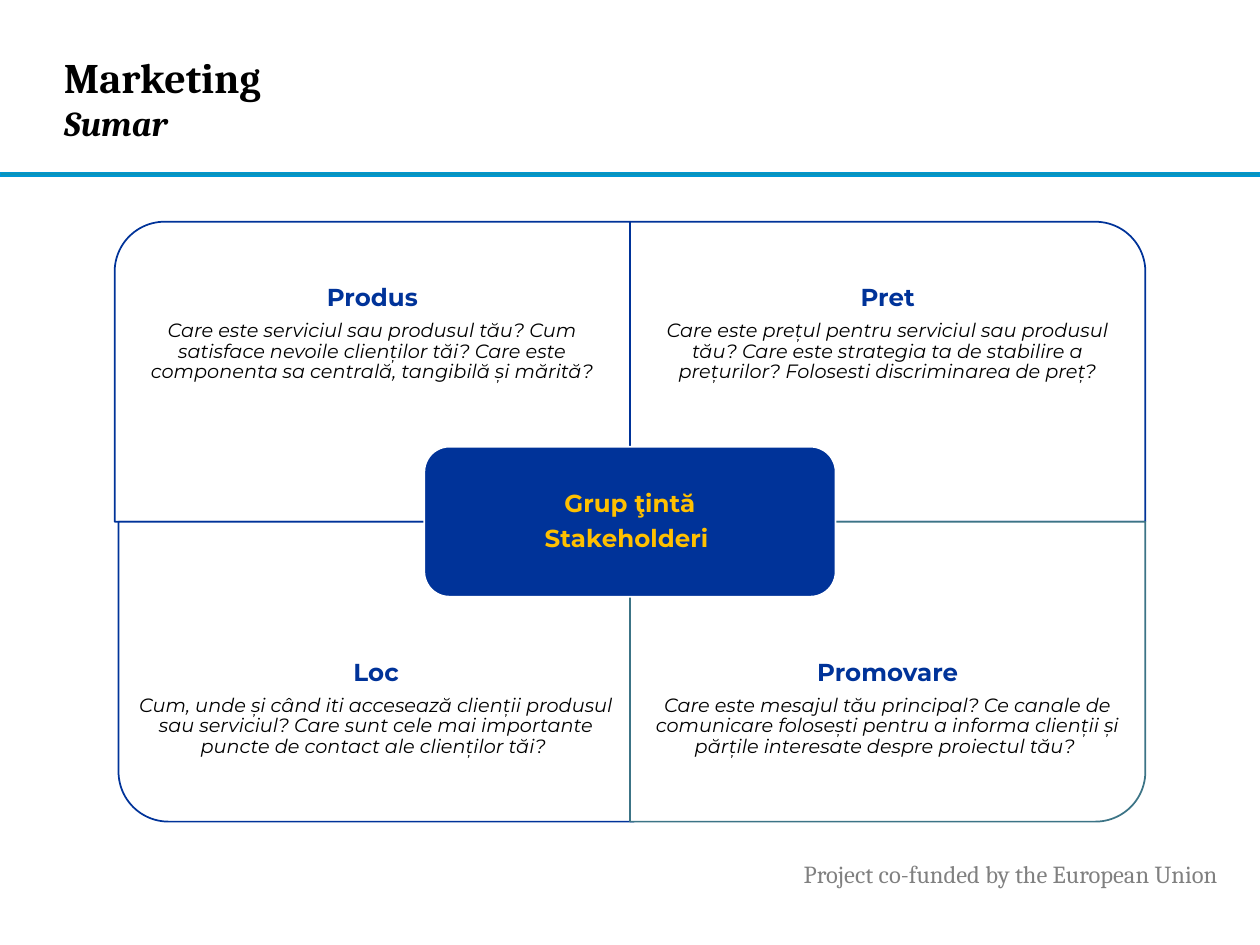
from pptx import Presentation
from pptx.dml.color import RGBColor
from pptx.enum.shapes import MSO_SHAPE
from pptx.enum.text import MSO_ANCHOR, PP_ALIGN
from pptx.util import Pt

BLUE = RGBColor(0x00, 0x33, 0x99)
TEAL = RGBColor(0x3C, 0x74, 0x86)
GOLD = RGBColor(0xFF, 0xC0, 0x00)
GRAY = RGBColor(0x80, 0x80, 0x80)
BLACK = RGBColor(0, 0, 0)
WHITE = RGBColor(0xFF, 0xFF, 0xFF)
BAR_FILL = RGBColor(0x0C, 0x94, 0xB7)
BAR_LINE = RGBColor(0x00, 0x96, 0xD3)

# Content: heading, question, left, row, rotation, outline
PANELS = [
    ("Produs", "Care este serviciul sau produsul tău? Cum satisface nevoile clienților tăi? "
     "Care este componenta sa centrală, tangibilă și mărită?", 65.5, 0, 270, BLUE),
    ("Pret", "Care este prețul pentru serviciul sau produsul tău? Care este strategia ta de "
     "stabilire a prețurilor? Folosesti discriminarea de preț?", 360, 0, 0, BLUE),
    ("Loc", "Cum, unde și când iti accesează clienții produsul sau serviciul? Care sunt cele "
     "mai importante puncte de contact ale clienților tăi? ", 67.7, 1, 180, BLUE),
    ("Promovare", "Care este mesajul tău principal? Ce canale de comunicare folosești pentru a "
     "informa clienții și părțile interesate despre proiectul tău? ", 360, 1, 90, TEAL),
]
CENTER = ["Grup ţintă", "Stakeholderi "]
FOOTER = "Project co-funded by the European Union"

# Text formats
TITLE = dict(name="Cambria", size=Pt(24), bold=True, italic=False, color=BLACK)
SUBTITLE = dict(TITLE, size=Pt(20), italic=True)
FOOT = dict(name="Cambria", size=Pt(14), color=GRAY)
HEADING = dict(name="Montserrat", size=Pt(14), bold=True, color=BLUE)
QUESTION = dict(name="Montserrat", size=Pt(11), italic=True, color=BLACK)
HUB = dict(HEADING, color=GOLD)

# Grid in points
PANEL_W, PANEL_H, TEXT_H = 294.5, 171.4, 128.6
TOP = 126.7
HUB_W, HUB_H = 235, 85.7

prs = Presentation()
prs.slide_width, prs.slide_height = Pt(720), Pt(540)
s = prs.slides.add_slide(prs.slide_layouts[6])


def add_shape(kind, x, y, w, h, fill, line, rotation=0):
    if rotation % 180:  # turned shapes keep their centre with sides swapped
        x, y, w, h = x + (w - h) / 2, y + (h - w) / 2, h, w
    sp = s.shapes.add_shape(kind, Pt(x), Pt(y), Pt(w), Pt(h))
    sp.shadow.inherit = False
    sp.rotation = rotation
    sp.fill.solid()
    sp.fill.fore_color.rgb = fill
    sp.line.color.rgb = line
    sp.line.width = Pt(1)


def add_run(p, text, fmt):
    r = p.add_run()
    r.text = text
    for key, value in fmt.items():
        if key == "color":
            r.font.color.rgb = value
        else:
            setattr(r.font, key, value)


def add_box(x, y, w, h, inset, anchor=MSO_ANCHOR.MIDDLE):
    tf = s.shapes.add_textbox(Pt(x), Pt(y), Pt(w), Pt(h)).text_frame
    tf.word_wrap = True
    tf.vertical_anchor = anchor
    for side in ("left", "right", "top", "bottom"):
        setattr(tf, f"margin_{side}", Pt(inset))
    return tf


def add_centered(tf, lines):
    for i, (text, fmt) in enumerate(lines):
        p = tf.add_paragraph() if i else tf.paragraphs[0]
        p.alignment = PP_ALIGN.CENTER
        p.line_spacing = 0.9
        p.space_after = Pt(4.9)
        add_run(p, text, fmt)


# Header bar, footer and title
add_shape(MSO_SHAPE.RECTANGLE, 0, 98.6, 720, 2.2, BAR_FILL, BAR_LINE)
tf = add_box(452.2, 487.4, 263.5, 24.5, 7.2, MSO_ANCHOR.TOP)
tf.margin_top = tf.margin_bottom = Pt(3.6)
add_run(tf.paragraphs[0], FOOTER, FOOT)
p = add_box(36.5, 13, 523.4, 85.7, 0).paragraphs[0]
add_run(p, "Marketing", TITLE)
p.add_line_break()
add_run(p, "Sumar", SUBTITLE)

# Four panels, text kept on the outer three quarters
for heading, question, x, row, rotation, line in PANELS:
    y = TOP + row * PANEL_H
    add_shape(MSO_SHAPE.ROUND_1_RECTANGLE, x, y, PANEL_W, PANEL_H, WHITE, line, rotation)
    tf = add_box(x, y + row * (PANEL_H - TEXT_H), PANEL_W, TEXT_H, 7.9)
    add_centered(tf, [(heading, HEADING), (question, QUESTION)])

# Central hub
x, y = 360 - HUB_W / 2, TOP + PANEL_H - HUB_H / 2
add_shape(MSO_SHAPE.ROUNDED_RECTANGLE, x, y, HUB_W, HUB_H, BLUE, WHITE)
tf = add_box(x + 4.2, y + 4.2, HUB_W - 8.4, HUB_H - 8.4, 4.2)
add_centered(tf, [(text, HUB) for text in CENTER])

prs.save("out.pptx")
